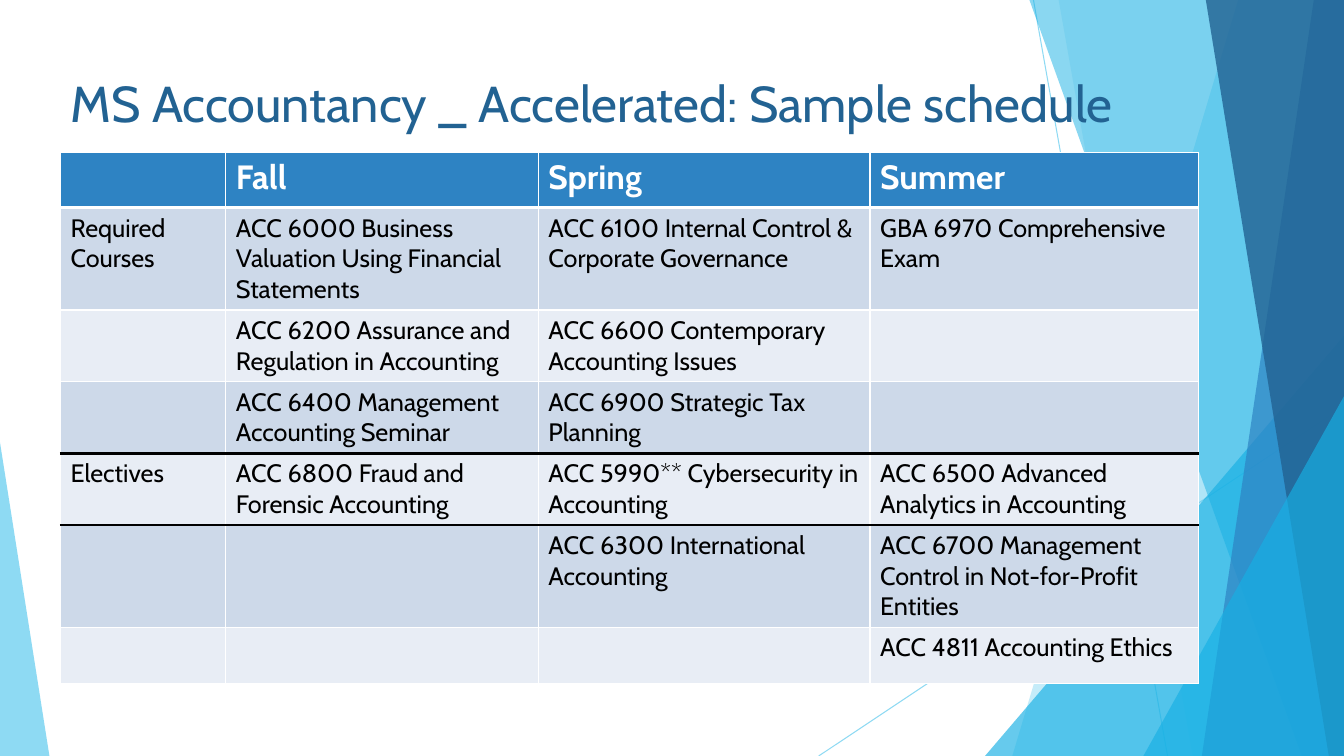
from dataclasses import dataclass

from lxml import etree
from pptx import Presentation
from pptx import util as u
from pptx.dml import color
from pptx.enum import shapes, text
from pptx.oxml import ns


@dataclass(frozen=True)
class Theme:
    font: str = "Cabin"
    title_size: int = 36
    header_size: int = 24
    body_size: int = 18
    white: str = "FFFFFF"
    black: str = "000000"
    sky: str = "5FCBEF"
    cyan: str = "17B0E4"
    blue: str = "2E83C3"
    navy: str = "226292"
    bands: tuple = ("CDD9E9", "E8EDF5")


theme = Theme()
WIDTH, HEIGHT = 13.33, 7.5


def paint(fill, shade, opacity=100):
    fill.solid()
    fill.fore_color.rgb = color.RGBColor.from_string(shade)
    if opacity < 100:
        for tint in fill._xPr.iter(ns.qn("a:srgbClr")):
            etree.SubElement(tint, ns.qn("a:alpha"), val=str(opacity * 1000))


def add_border(cell, side, shade, points):
    properties = cell._tc.get_or_add_tcPr()
    line = etree.SubElement(properties, ns.qn(f"a:ln{side}"), w=str(u.Pt(points)))
    solid = etree.SubElement(line, ns.qn("a:solidFill"))
    etree.SubElement(solid, ns.qn("a:srgbClr"), val=shade)


deck = Presentation()
deck.slide_width, deck.slide_height = u.Inches(WIDTH), u.Inches(HEIGHT)
page = deck.slides.add_slide(deck.slide_layouts[5])

for start_x, start_y, end_x in [(10.25, 0, 11.58), (WIDTH, 4.03, 8.12)]:
    ray = page.shapes.add_connector(
        shapes.MSO_CONNECTOR.STRAIGHT,
        u.Inches(start_x), u.Inches(start_y), u.Inches(end_x), u.Inches(HEIGHT))
    ray.line.width = u.Pt(0.75)
    paint(ray.line.fill, theme.sky, 70)
    etree.SubElement(ray.element.spPr, ns.qn("a:effectLst"))

facets = [
    ("band", 12.28, 10.04, theme.sky, 36),
    ("band", 10.5, 11.83, theme.sky, 20),
    ("triangle", (9.77, 3.56), (4.17, 1), theme.cyan, 66),
    ("band", 10.21, 12.91, theme.cyan, 50),
    ("band", 13.03, 11.92, theme.blue, 70),
    ("band", 11.96, 13.18, theme.navy, 80),
    ("triangle", (11.34, 1.99), (3.57, 1), theme.cyan, 66),
    ("triangle", (0, 0.49), (3.11, 0), theme.sky, 70),
]
for kind, first, second, shade, opacity in facets:
    if kind == "band":
        corners = [(WIDTH, 0), (WIDTH, HEIGHT), (second, HEIGHT)]
        outline = page.shapes.build_freeform(u.Inches(first), 0)
        outline.add_line_segments([(u.Inches(x), u.Inches(y)) for x, y in corners])
        facet = outline.convert_to_shape()
    else:
        (left, width), (height, apex) = first, second
        facet = page.shapes.add_shape(
            shapes.MSO_SHAPE.ISOSCELES_TRIANGLE,
            u.Inches(left), u.Inches(HEIGHT - height), u.Inches(width), u.Inches(height))
        facet.adjustments[0] = apex
    facet.shadow.inherit = False
    facet.line.fill.background()
    paint(facet.fill, shade, opacity)

title = page.shapes.title
title.element.getparent().append(title.element)
title.left, title.top = u.Inches(0.6), u.Inches(0.67)
title.width, title.height = u.Inches(11.29), u.Inches(1.44)
title.text_frame.text = "MS Accountancy _ Accelerated: Sample schedule"
title.text_frame.vertical_anchor = text.MSO_ANCHOR.TOP
title.text_frame.word_wrap = True
para = title.text_frame.paragraphs[0]
para.alignment = text.PP_ALIGN.LEFT
para.font.name = theme.font
para.font.size = u.Pt(theme.title_size)
para.font.color.rgb = color.RGBColor.from_string(theme.navy)

schedule = [
    ["", "Fall", "Spring", "Summer"],
    ["Required Courses", "ACC 6000 Business Valuation Using Financial Statements",
     "ACC 6100 Internal Control & Corporate Governance", "GBA 6970 Comprehensive Exam"],
    ["", "ACC 6200 Assurance and Regulation in Accounting",
     "ACC 6600 Contemporary Accounting Issues", ""],
    ["", "ACC 6400 Management Accounting Seminar", "ACC 6900 Strategic Tax Planning", ""],
    ["Electives", "ACC 6800 Fraud and Forensic Accounting",
     "ACC 5990** Cybersecurity in Accounting", "ACC 6500 Advanced Analytics in Accounting"],
    ["", "", "ACC 6300 International Accounting",
     "ACC 6700 Management Control in Not-for-Profit Entities"],
    ["", "", "", "ACC 4811 Accounting Ethics"],
]
column_widths = [1.64, 3.1, 3.29, 3.26]
row_heights = [0.55, 1.01, 0.71, 0.71, 0.71, 1.01, 0.56]
rules_below = {0: (theme.white, 3), 3: (theme.black, 2.25), 4: (theme.black, 2.25)}
thin_rule = (theme.white, 1)

table = page.shapes.add_table(
    len(schedule), len(column_widths), u.Inches(0.6), u.Inches(1.51),
    u.Inches(sum(column_widths)), u.Inches(sum(row_heights))).table
for column, width in zip(table.columns, column_widths):
    column.width = u.Inches(width)
for row, height in zip(table.rows, row_heights):
    row.height = u.Inches(height)

for row_index, entries in enumerate(schedule):
    header = row_index == 0
    above = rules_below.get(row_index - 1, thin_rule)
    below = rules_below.get(row_index, thin_rule)
    for column_index, entry in enumerate(entries):
        cell = table.cell(row_index, column_index)
        cell.text = entry
        for side, rule in zip("LRTB", (thin_rule, thin_rule, above, below)):
            add_border(cell, side, *rule)
        paint(cell.fill, theme.blue if header else theme.bands[(row_index - 1) % 2])
        para = cell.text_frame.paragraphs[0]
        para.font.name = theme.font
        para.font.size = u.Pt(theme.header_size if header else theme.body_size)
        para.font.bold = header
        para.font.color.rgb = color.RGBColor.from_string(
            theme.white if header else theme.black)

deck.save("out.pptx")
